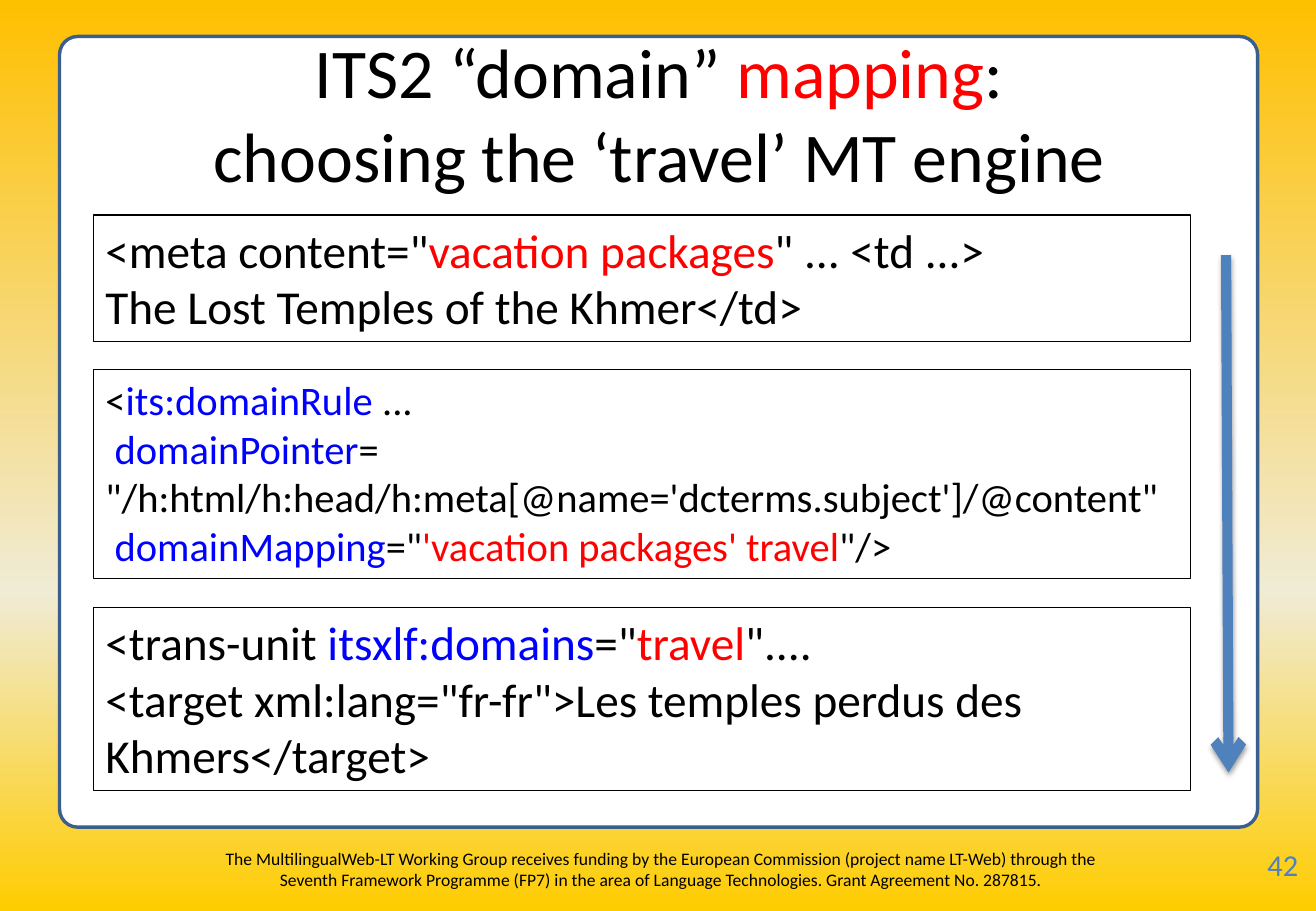
from lxml import etree
from pptx import Presentation
from pptx.dml.color import RGBColor
from pptx.enum.shapes import MSO_CONNECTOR, MSO_SHAPE
from pptx.enum.text import MSO_ANCHOR, PP_ALIGN
from pptx.oxml.ns import qn
from pptx.util import Inches, Pt

LEFT, CENTER = PP_ALIGN.LEFT, PP_ALIGN.CENTER
TOP, MIDDLE = MSO_ANCHOR.TOP, MSO_ANCHOR.MIDDLE
ROUNDED, STRAIGHT = MSO_SHAPE.ROUNDED_RECTANGLE, MSO_CONNECTOR.STRAIGHT

THEME = {
    "font": "Calibri",
    "black": "000000", "red": "FF0000", "blue": "0000FF", "white": "FFFFFF",
    "frame": "3A5F8C", "accent": "4F81BD",
    "backdrop": [(0, "FFC000"), (65, "F0EBD5"), (100, "FFCC00")],
    "title": 41.4, "large": 28, "code": 24, "page": 18, "foot": 10.4,
}

# Each line is a list of (text, colour) runs.
TITLE = [
    [("ITS2 “domain” ", "black"), ("mapping", "red"), (":", "black")],
    [("choosing the ‘travel’ MT engine", "black")],
]
SOURCE = [
    [('<meta content="', "black"), ("vacation packages", "red"),
     ('" ... <td ...>', "black")],
    [("The Lost Temples of the Khmer</td>", "black")],
]
RULE = [
    [("<", "black"), ("its:domainRule ", "blue"), ("...", "black")],
    [(" ", "black"), ("domainPointer", "blue"), ("=", "black")],
    [("\"/h:html/h:head/h:meta[@name='dcterms.subject']/@content\"", "black")],
    [(" ", "black"), ("domainMapping", "blue"), ('="', "black"),
     ("'vacation packages' travel", "red"), ('"/>', "black")],
]
TARGET = [
    [("<trans-unit ", "black"), ("itsxlf:domains", "blue"), ('="', "black"),
     ("travel", "red"), ('"....', "black")],
    [('<target xml:lang="fr-fr">Les temples perdus des Khmers</target>', "black")],
]
FOOT = [[("The MultilingualWeb-LT Working Group receives funding by the European "
          "Commission (project name LT-Web) through the Seventh Framework Programme "
          "(FP7) in the area of Language Technologies. Grant Agreement No. 287815.",
          "black")]]
PAGE = [[("42", "accent")]]

# lines, top, height, type size
PANELS = [
    (SOURCE, 1.77, 1.04, "large"),
    (RULE, 3.04, 1.72, "code"),
    (TARGET, 5, 1.51, "large"),
]
PANEL_X, PANEL_W = 0.77, 9.03


def color(name):
    return RGBColor.from_string(THEME[name])


def add_text(slide, lines, place, size, align=LEFT, anchor=TOP, pad=(0.1, 0.05)):
    box = slide.shapes.add_textbox(*map(Inches, place))
    frame = box.text_frame
    frame.word_wrap = True
    frame.vertical_anchor = anchor
    frame.margin_left = frame.margin_right = Inches(pad[0])
    frame.margin_top = frame.margin_bottom = Inches(pad[1])
    for i, line in enumerate(lines):
        para = frame.add_paragraph() if i else frame.paragraphs[0]
        para.alignment = align
        for text, tint in line:
            run = para.add_run()
            run.text = text
            run.font.name = THEME["font"]
            run.font.size = Pt(THEME[size])
            run.font.color.rgb = color(tint)
    return box


def set_line(shape, tint, width):
    shape.line.color.rgb = color(tint)
    shape.line.width = Pt(width)


def add_node(parent, tag, **attrs):
    node = etree.SubElement(parent, qn(tag))
    for key, value in attrs.items():
        node.set(key, str(value))
    return node


def paint_back(slide):
    fill = slide.background.fill
    fill.gradient()
    fill.gradient_angle = 270
    stops = next(slide.element.iter(qn("a:gsLst")))
    for stop in list(stops):
        stops.remove(stop)
    for pos, tint in THEME["backdrop"]:
        stop = add_node(stops, "a:gs", pos=pos * 1000)
        add_node(stop, "a:srgbClr", val=tint)


def add_arrow(slide, start, end):
    """Draw a thick arrow with a soft shadow below it."""
    arrow = slide.shapes.add_connector(STRAIGHT, *map(Inches, start + end))
    set_line(arrow, "accent", 6)
    add_node(arrow.line._get_or_add_ln(), "a:tailEnd", type="arrow")
    effects = add_node(arrow._element.spPr, "a:effectLst")
    shadow = add_node(effects, "a:outerShdw", blurRad=Pt(3.1), dist=Pt(1.6),
                      dir=5400000, rotWithShape=0)
    tint = add_node(shadow, "a:srgbClr", val=THEME["black"])
    add_node(tint, "a:alpha", val=38000)


def main():
    deck = Presentation()
    deck.slide_width, deck.slide_height = Inches(10.83), Inches(7.5)
    slide = deck.slides.add_slide(deck.slide_layouts[6])
    paint_back(slide)

    card = slide.shapes.add_shape(ROUNDED, *map(Inches, (0.49, 0.3, 9.86, 6.51)))
    card.shadow.inherit = False
    card.adjustments[0] = 0.023
    card.fill.solid()
    card.fill.fore_color.rgb = color("white")
    set_line(card, "frame", 2)

    add_text(slide, FOOT, (1.62, 6.93, 7.64, 0.4), "foot", CENTER)
    add_text(slide, TITLE, (0.51, 0.3, 9.83, 1.25), "title", CENTER, MIDDLE)
    add_text(slide, PAGE, (10.41, 6.96, 0.42, 0.4), "page", pad=(0.02, 0.01))
    for lines, top, height, size in PANELS:
        panel = add_text(slide, lines, (PANEL_X, top, PANEL_W, height), size)
        set_line(panel, "black", 0.75)
    add_arrow(slide, (10.09, 2.1), (10.11, 6.36))
    deck.save("out.pptx")


if __name__ == "__main__":
    main()
